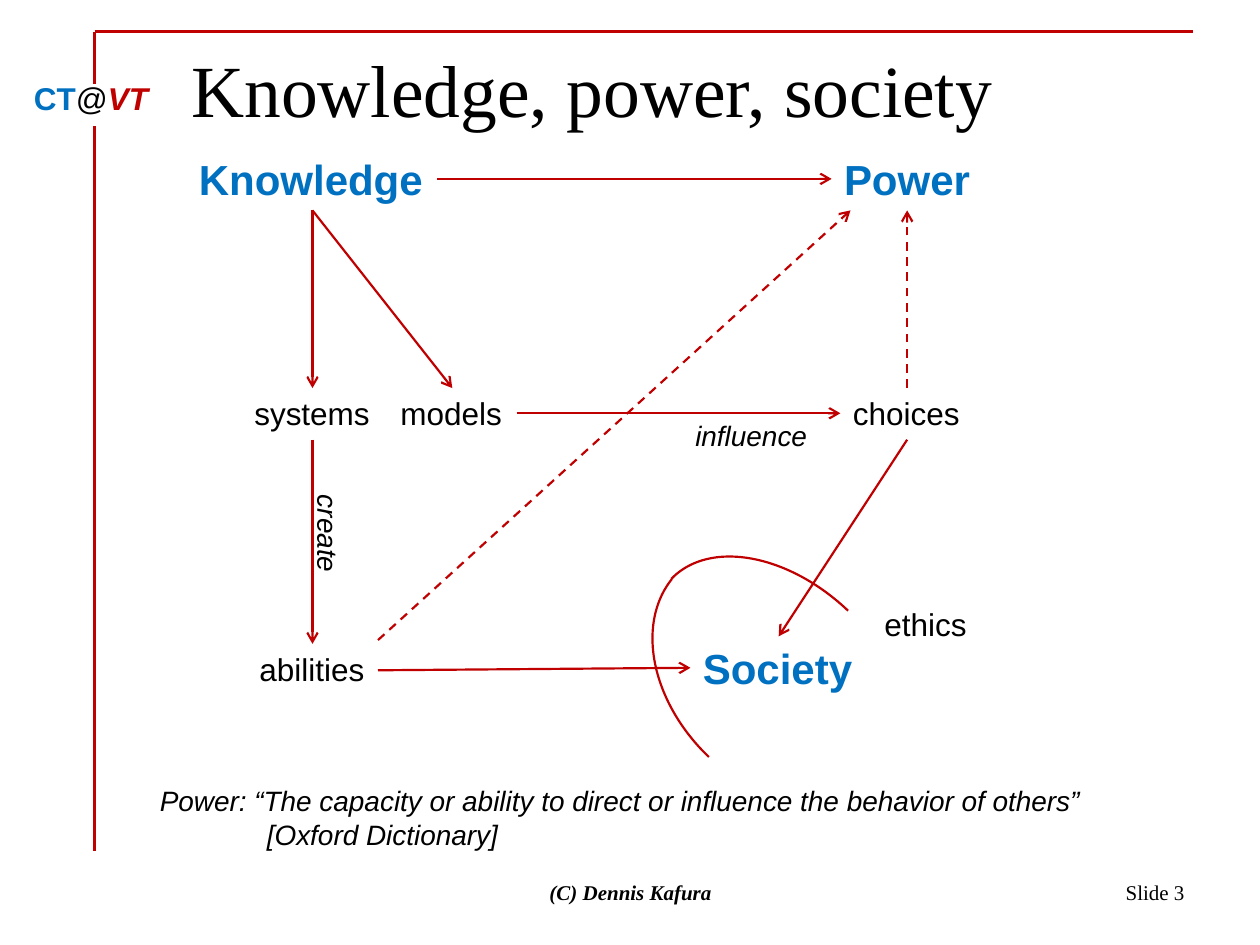
from lxml import etree
from pptx import Presentation
from pptx.dml.color import RGBColor
from pptx.enum import dml, shapes, text
from pptx.oxml.ns import qn
from pptx.util import Inches, Pt

RED = RGBColor(0xC0, 0x00, 0x00)
BLUE = RGBColor(0x00, 0x70, 0xC0)
BLACK = RGBColor(0x00, 0x00, 0x00)
SANS = "Arial"
SERIF = "Times New Roman"


def style(font, size, color=BLACK, name=SANS, bold=False, italic=False):
    """Set the look of a paragraph or run font."""
    font.size, font.name = Pt(size), name
    font.bold, font.italic = bold, italic
    font.color.rgb = color


def add_text(slide, box, words, size, wrap=False, align=text.PP_ALIGN.LEFT,
             anchor=text.MSO_ANCHOR.TOP, **look):
    """Add a text box with one styled paragraph per line of words."""
    shape = slide.shapes.add_textbox(*(Inches(n) for n in box))
    frame = shape.text_frame
    frame.word_wrap, frame.vertical_anchor = wrap, anchor
    frame.text = words
    for paragraph in frame.paragraphs:
        paragraph.alignment = align
        style(paragraph.font, size, **look)
    return shape


def add_line(slide, start, end, width=1.25, arrow=False, dashed=False):
    """Add a straight red line, optionally dashed or with an arrowhead."""
    points = (Inches(n) for n in (*start, *end))
    connector = slide.shapes.add_connector(shapes.MSO_CONNECTOR.STRAIGHT, *points)
    connector.line.color.rgb = RED
    connector.line.width = Pt(width)
    if dashed:
        connector.line.dash_style = dml.MSO_LINE.DASH
    if arrow:
        outline = connector.line._get_or_add_ln()
        etree.SubElement(outline, qn("a:tailEnd"), type="arrow")
    etree.SubElement(connector._element.spPr, qn("a:effectLst"))


def add_arc(slide, box, flips, end_angle):
    """Add a tilted, mirrored red arc."""
    shape = slide.shapes.add_shape(shapes.MSO_SHAPE.ARC, *(Inches(n) for n in box))
    shape.adjustments[0], shape.adjustments[1] = 162, end_angle
    shape.rotation = 43.6
    for flip in flips:
        shape._element.spPr.xfrm.set(flip, "1")
    shape.shadow.inherit = False
    shape.fill.background()
    shape.line.color.rgb = RED
    shape.line.width = Pt(1.25)


def add_border(slide, left, top, width, height):
    """Draw the corner rules with the course mark set in the gap."""
    add_line(slide, (left, top), (left + width, top), 2)
    add_line(slide, (left, top), (left, top + 0.42), 1.75)
    add_line(slide, (left, top + 0.75), (left, top + height), 1.75)
    mark = add_text(slide, (left - 0.58, top + 0.33, 1.12, 0.4), "", 18)
    paragraph = mark.text_frame.paragraphs[0]
    for words, color, bold, italic in (("CT", BLUE, True, False),
                                       ("@", BLACK, False, False),
                                       ("VT", RED, True, True)):
        run = paragraph.add_run()
        run.text = words
        style(run.font, 18, color, bold=bold, italic=italic)


def add_diagram(slide, left, top):
    """Draw the concepts, their arrows and the ethics boundary."""
    def at(x, y):
        return left + x, top + y

    for words, x, y, width in (("Knowledge", 0, 0, 1.99), ("Power", 5.12, 0, 1.21),
                               ("Society", 4, 3.88, 1.4)):
        add_text(slide, (*at(x, y), width, 0.51), words, 24, color=BLUE, bold=True)
    for words, x, y, width in (("systems", 0.44, 1.91, 1.13), ("models", 1.6, 1.91, 1.02),
                               ("choices", 5.19, 1.91, 1.06), ("abilities", 0.48, 3.94, 1.04),
                               ("ethics", 5.44, 3.58, 0.86)):
        add_text(slide, (*at(x, y), width, 0.4), words, 18)
    for words, x, y, width, turn in (("create", 0.71, 2.89, 0.83, 90),
                                     ("influence", 3.94, 2.1, 1.1, 0)):
        label = add_text(slide, (*at(x, y), width, 0.37), words, 16, italic=True)
        label.rotation = turn

    add_arc(slide, (*at(3.52, 3.46), 2.38, 1.57), ("flipH",), 0)
    add_arc(slide, (*at(3.56, 3.33), 2.38, 1.75), ("flipH", "flipV"), 214.385)

    for start, end, dashed in (((1.99, 0.25), (5.12, 0.25), False),
                               ((1, 0.5), (1, 1.91), False),
                               ((1, 0.5), (2.11, 1.91), False),
                               ((2.62, 2.11), (5.19, 2.11), False),
                               ((1, 2.32), (1, 3.94), False),
                               ((1.52, 4.15), (4, 4.13), False),
                               ((5.72, 2.32), (4.7, 3.88), False),
                               ((5.72, 1.91), (5.72, 0.5), True),
                               ((1.52, 3.91), (5.27, 0.5), True)):
        add_line(slide, at(*start), at(*end), arrow=True, dashed=dashed)


def add_definition(slide, box):
    """Add the quoted definition with its source indented below."""
    shape = add_text(slide, box, "Power: “The capacity or ability to direct or influence "
                     "the behavior of others”\n[Oxford Dictionary]", 16, wrap=True, italic=True)
    source = shape.text_frame.paragraphs[1]
    source._p.get_or_add_pPr().set("marL", str(Inches(0.85)))


def add_footer(slide, left, top, height):
    """Add the copyright line and the slide number."""
    common = dict(wrap=True, anchor=text.MSO_ANCHOR.MIDDLE, name=SERIF)
    add_text(slide, (left, top, 3.17, height), "(C) Dennis Kafura", 12,
             align=text.PP_ALIGN.CENTER, bold=True, italic=True, **common)
    add_text(slide, (left + 3.75, top, 2.33, height), "Slide 3", 12,
             align=text.PP_ALIGN.RIGHT, **common)


def main():
    """Build and save the slide."""
    presentation = Presentation()
    presentation.slide_width, presentation.slide_height = Inches(10), Inches(7.5)
    slide = presentation.slides.add_slide(presentation.slide_layouts[6])
    add_border(slide, 0.75, 0.25, 8.72, 6.5)
    add_text(slide, (1.42, 0.3, 8.08, 0.78), "Knowledge, power, society", 42,
             wrap=True, name=SERIF)
    add_diagram(slide, 1.48, 1.17)
    add_definition(slide, (1.17, 6.17, 8, 0.64))
    add_footer(slide, 3.42, 6.83, 0.5)
    presentation.save("out.pptx")


if __name__ == "__main__":
    main()
